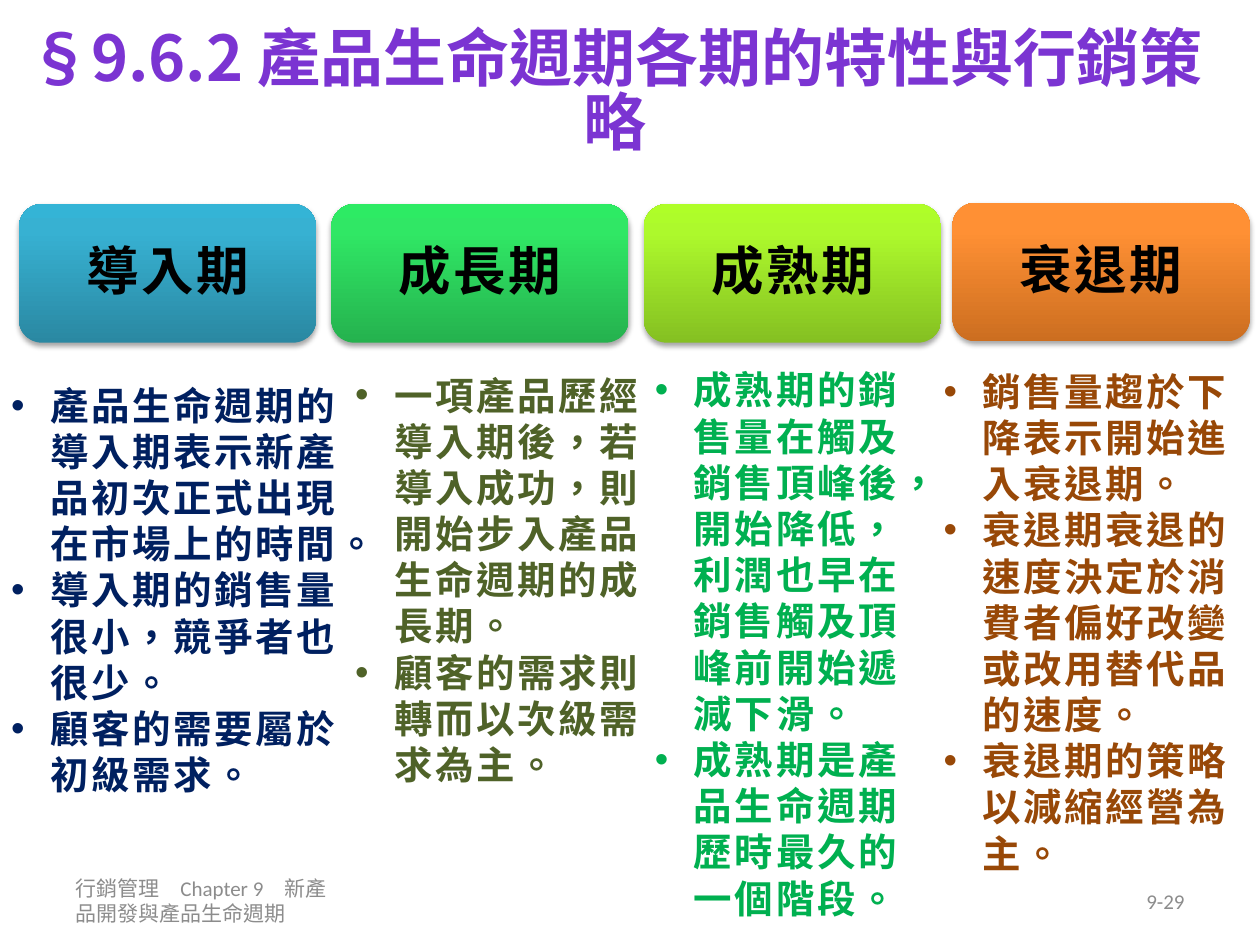
from collections import namedtuple
from lxml.etree import SubElement
from pptx import Presentation
from pptx.dml.color import RGBColor
from pptx.enum.shapes import MSO_SHAPE
from pptx.enum.text import MSO_ANCHOR, PP_ALIGN
from pptx.oxml.ns import qn
from pptx.util import Emu, Inches, Pt

Stage = namedtuple("Stage", "name gradient card_left card_top ink body_box points")
Style = namedtuple("Style", "font size color bold spacing")

TITLE = "§9.6.2 產品生命週期各期的特性與行銷策略"
FOOTER = "行銷管理　Chapter 9　新產品開發與產品生命週期"
PAGE_NUMBER = "9-29"

STAGES = [
    Stage("導入期", ("2A88A2", "37B1D2", "34B4D6"), 0.15, 1.62, "002060", (-0.01, 2.98, 2.83, 3.43), [
        "產品生命週期的導入期表示新產品初次正式出現在市場上的時間。",
        "導入期的銷售量很小，競爭者也很少。",
        "顧客的需要屬於初級需求。",
    ]),
    Stage("成長期", ("25B24E", "30E765", "2DEB64"), 2.63, 1.62, "4F6228", (2.72, 2.9, 2.53, 3.43), [
        "一項產品歷經導入期後，若導入成功，則開始步入產品生命週期的成長期。",
        "顧客的需求則轉而以次級需求為主。",
    ]),
    Stage("成熟期", ("85C022", "ADF92C", "AFFE28"), 5.11, 1.62, "00B050", (5.1, 2.86, 2.23, 4.54), [
        "成熟期的銷售量在觸及銷售頂峰後，開始降低，利潤也早在銷售觸及頂峰前開始遞減下滑。",
        "成熟期是產品生命週期歷時最久的一個階段。",
    ]),
    Stage("衰退期", ("CC6E20", "FF9034", "FF9136"), 7.56, 1.61, "984807", (7.39, 2.87, 2.56, 4.17), [
        "銷售量趨於下降表示開始進入衰退期。",
        "衰退期衰退的速度決定於消費者偏好改變或改用替代品的速度。",
        "衰退期的策略以減縮經營為主。",
    ]),
]

THEME = {
    "title": Style("Noto Sans CJK SC", 36, "7B34D2", True, 0),
    "card": Style("Noto Sans CJK SC", 30, "000000", True, 1.5),
    "body": Style("Calibri", 22, None, True, 1.5),
    "footer": Style("Calibri", 12, "8C8C8C", False, 0),
}
CARD_SIZE = (2.36, 1.1)
FOOTER_SIZE = (2.33, 0.4)
MARGIN, FOOTER_TOP, SLIDE_WIDTH = 0.5, 6.95, 10
INDENT = Inches(0.31)
GRADIENT_STOPS = (0, 80, 100)


def style_paragraph(para, style, color=None):
    font = para.font
    font.size, font.bold, font.name = Pt(style.size), style.bold, style.font
    font.color.rgb = RGBColor.from_string(color or style.color)
    properties = para._p.pPr.find(qn("a:defRPr"))
    properties.set("lang", "zh-TW")
    properties.set("spc", str(int(style.spacing * 100)))
    SubElement(properties, qn("a:ea"), typeface=style.font)


def add_bullet(para):
    properties = para._p.get_or_add_pPr()
    properties.set("marL", str(INDENT))
    properties.set("indent", str(-INDENT))
    SubElement(properties, qn("a:buFont"), typeface="Arial")
    SubElement(properties, qn("a:buChar"), char="•")


def fill_frame(frame, texts, style, color=None, align=PP_ALIGN.LEFT, anchor=MSO_ANCHOR.MIDDLE,
               bulleted=False, line_spacing=None):
    frame.word_wrap, frame.vertical_anchor = True, anchor
    for index, text in enumerate(texts):
        para = frame.add_paragraph() if index else frame.paragraphs[0]
        para.text, para.alignment = text, align
        if line_spacing:
            para.line_spacing = line_spacing
        if bulleted:
            add_bullet(para)
        style_paragraph(para, style, color)


def add_text(slide, position, texts, style, **options):
    box = slide.shapes.add_textbox(*map(Inches, position))
    fill_frame(box.text_frame, texts, style, **options)


def add_card(slide, stage):
    card = slide.shapes.add_shape(
        MSO_SHAPE.ROUNDED_RECTANGLE, *map(Inches, (stage.card_left, stage.card_top, *CARD_SIZE)))
    card.fill.gradient()
    card.fill.gradient_angle = 90
    properties = card._element.spPr
    stops = properties.find(".//" + qn("a:gsLst"))
    stops.clear()
    for position, color in zip(GRADIENT_STOPS, stage.gradient):
        stop = SubElement(stops, qn("a:gs"), pos=str(position * 1000))
        SubElement(stop, qn("a:srgbClr"), val=color)
    card.line.fill.background()
    card.shadow.inherit = False
    shadow = SubElement(properties.find(qn("a:effectLst")), qn("a:outerShdw"),
                        blurRad=str(Pt(3.1)), dist=str(Pt(1.8)), dir="5400000", rotWithShape="0")
    shade = SubElement(shadow, qn("a:srgbClr"), val="000000")
    SubElement(shade, qn("a:alpha"), val="35000")
    fill_frame(card.text_frame, [stage.name], THEME["card"], align=PP_ALIGN.CENTER, line_spacing=0.9)


def main():
    deck = Presentation()
    deck.slide_width, deck.slide_height = Inches(SLIDE_WIDTH), Inches(7.5)
    slide = deck.slides.add_slide(deck.slide_layouts[6])
    add_text(slide, (0.12, 0.08, 9.53, 1.34), [TITLE], THEME["title"],
             align=PP_ALIGN.CENTER, line_spacing=0.84)
    add_text(slide, (MARGIN, FOOTER_TOP, *FOOTER_SIZE), [FOOTER], THEME["footer"])
    add_text(slide, (SLIDE_WIDTH - MARGIN - FOOTER_SIZE[0], FOOTER_TOP, *FOOTER_SIZE), [PAGE_NUMBER],
             THEME["footer"], align=PP_ALIGN.RIGHT)
    for stage in STAGES:
        add_card(slide, stage)
    for stage in STAGES:
        add_text(slide, stage.body_box, stage.points, THEME["body"], color=stage.ink,
                 anchor=MSO_ANCHOR.TOP, bulleted=True)
    deck.save("out.pptx")


if __name__ == "__main__":
    main()
